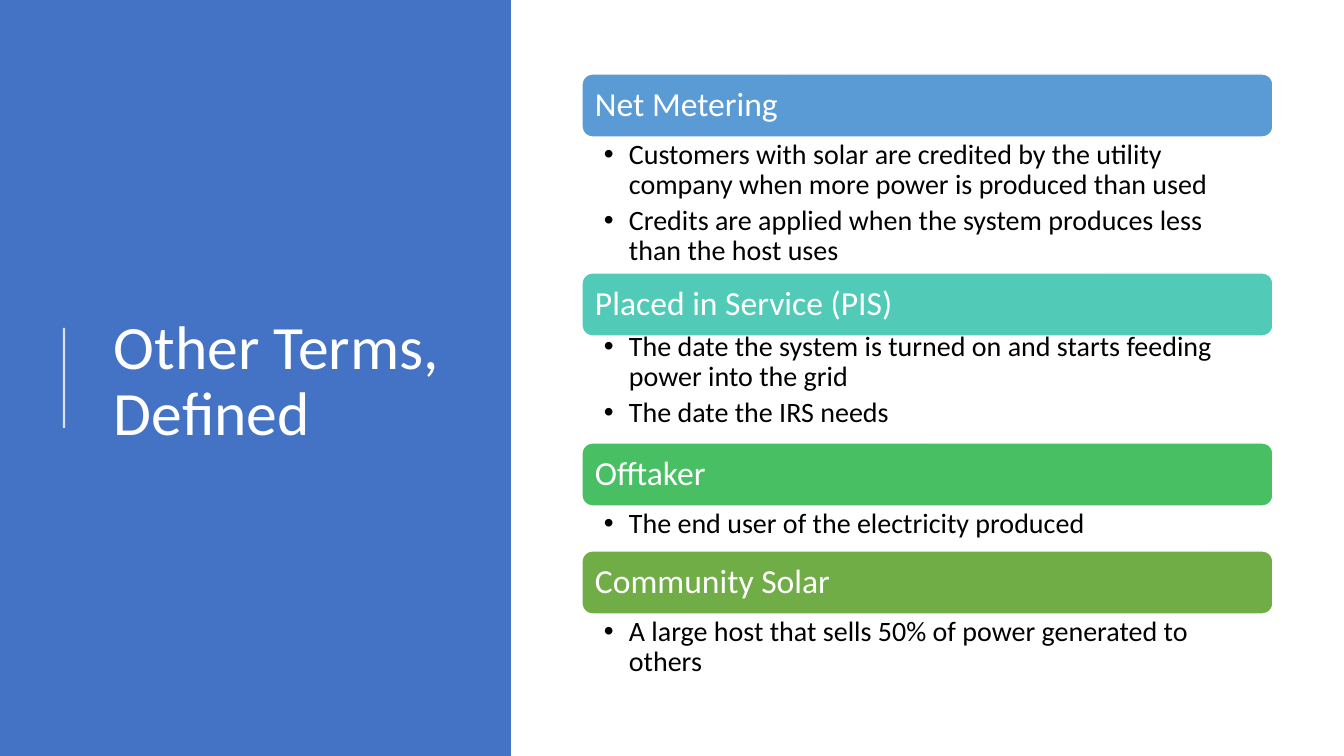
from lxml.etree import SubElement
from pptx import Presentation
from pptx.dml.color import RGBColor
from pptx.enum.shapes import MSO_CONNECTOR, MSO_SHAPE
from pptx.enum.text import MSO_ANCHOR, PP_ALIGN
from pptx.oxml.ns import qn
from pptx.util import Pt

SCALE = 12192000 / 1344
FONT = "Calibri"
COLORS = {
    "panel": "4472C4", "white": "FFFFFF", "black": "000000",
    "blue": "5B9BD5", "teal": "52CAB8", "green": "49BF64", "olive": "70AD47",
}
BAR_HEIGHT = 63
# heading, bar colour, body height, upward shift of the body, bullets
TERMS = [
    ("Net Metering", "blue", 136, 0, [
        "Customers with solar are credited by the utility company when more power is produced than used",
        "Credits are applied when the system produces less than the host uses"]),
    ("Placed in Service (PIS)", "teal", 107, 7, [
        "The date the system is turned on and starts feeding power into the grid",
        "The date the IRS needs"]),
    ("Offtaker", "green", 45, 0, ["The end user of the electricity produced"]),
    ("Community Solar", "olive", 69, 0, [
        "A large host that sells 50% of power generated to others"]),
]


def px(length):
    return round(length * SCALE)


def color(name):
    return RGBColor.from_string(COLORS[name])


def add_block(page, shape, left, top, width, height, fill):
    block = page.shapes.add_shape(shape, px(left), px(top), px(width), px(height))
    block.shadow.inherit = False
    block.fill.solid()
    block.fill.fore_color.rgb = color(fill)
    block.line.fill.background()
    return block


def set_frame(box, insets, anchor):
    """Set wrapping, anchor and the left, top, right and bottom insets."""
    frame = box.text_frame
    frame.word_wrap = True
    frame.vertical_anchor = anchor
    (frame.margin_left, frame.margin_top,
     frame.margin_right, frame.margin_bottom) = map(px, insets)
    return frame


def write(para, text, size, ink, after=0):
    """Add one run; after is the space below in percent."""
    para.alignment = PP_ALIGN.LEFT
    para.line_spacing = 0.9
    if after:
        space = SubElement(para._p.get_or_add_pPr(), qn("a:spcAft"))
        SubElement(space, qn("a:spcPct"), val=str(after * 1000))
    span = para.add_run()
    span.text = text
    span.font.name = FONT
    span.font.size = Pt(size)
    span.font.color.rgb = color(ink)


def add_bullet(para):
    properties = para._p.get_or_add_pPr()
    properties.set("marL", str(px(25)))
    properties.set("indent", str(px(-25)))
    SubElement(properties, qn("a:buFont"), typeface="Arial")
    SubElement(properties, qn("a:buChar"), char="•")


def title_panel(page, left, top, width, height):
    add_block(page, MSO_SHAPE.RECTANGLE, left, top, width, height, "panel")
    title = page.shapes.add_textbox(px(left + 104), px(top + 79), px(372), px(607))
    frame = set_frame(title, (10, 5, 10, 5), MSO_ANCHOR.MIDDLE)
    write(frame.paragraphs[0], "Other Terms, Defined", 44, "white")

    rule = page.shapes.add_connector(
        MSO_CONNECTOR.STRAIGHT, px(left + 64), px(top + 428), px(left + 64), px(top + 328))
    rule.line.width = Pt(1.5)
    rule.line.color.rgb = color("white")
    properties = rule._element.spPr
    SubElement(properties, qn("a:effectLst"))
    SubElement(next(properties.iter(qn("a:srgbClr"))), qn("a:alpha"), val="80000")


def term(page, left, top, width, height, heading, fill, lift, bullets):
    """Place a heading bar with its bulleted definition below."""
    bar = add_block(page, MSO_SHAPE.ROUNDED_RECTANGLE, left, top, width, BAR_HEIGHT, fill)
    bar.line.color.rgb = color("white")
    bar.line.width = Pt(1)
    frame = set_frame(bar, (10, 10, 10, 10), MSO_ANCHOR.MIDDLE)
    write(frame.paragraphs[0], heading, 24, "white", after=35)

    body = page.shapes.add_textbox(
        px(left), px(top + BAR_HEIGHT - lift), px(width), px(height))
    frame = set_frame(body, (22, 3, 16, 3), MSO_ANCHOR.TOP)
    for index, text in enumerate(bullets):
        para = frame.add_paragraph() if index else frame.paragraphs[0]
        para.level = 1
        write(para, text, 20, "black", after=20)
        add_bullet(para)


def term_list(page, left, top, width):
    for heading, fill, height, lift, bullets in TERMS:
        term(page, left, top, width, height, heading, fill, lift, bullets)
        top += BAR_HEIGHT + height


def main():
    deck = Presentation()
    deck.slide_width, deck.slide_height = px(1344), px(756)
    page = deck.slides.add_slide(deck.slide_layouts[6])
    title_panel(page, 0, 0, 511, 756)
    term_list(page, 582, 74, 691)
    deck.save("out.pptx")


if __name__ == "__main__":
    main()
